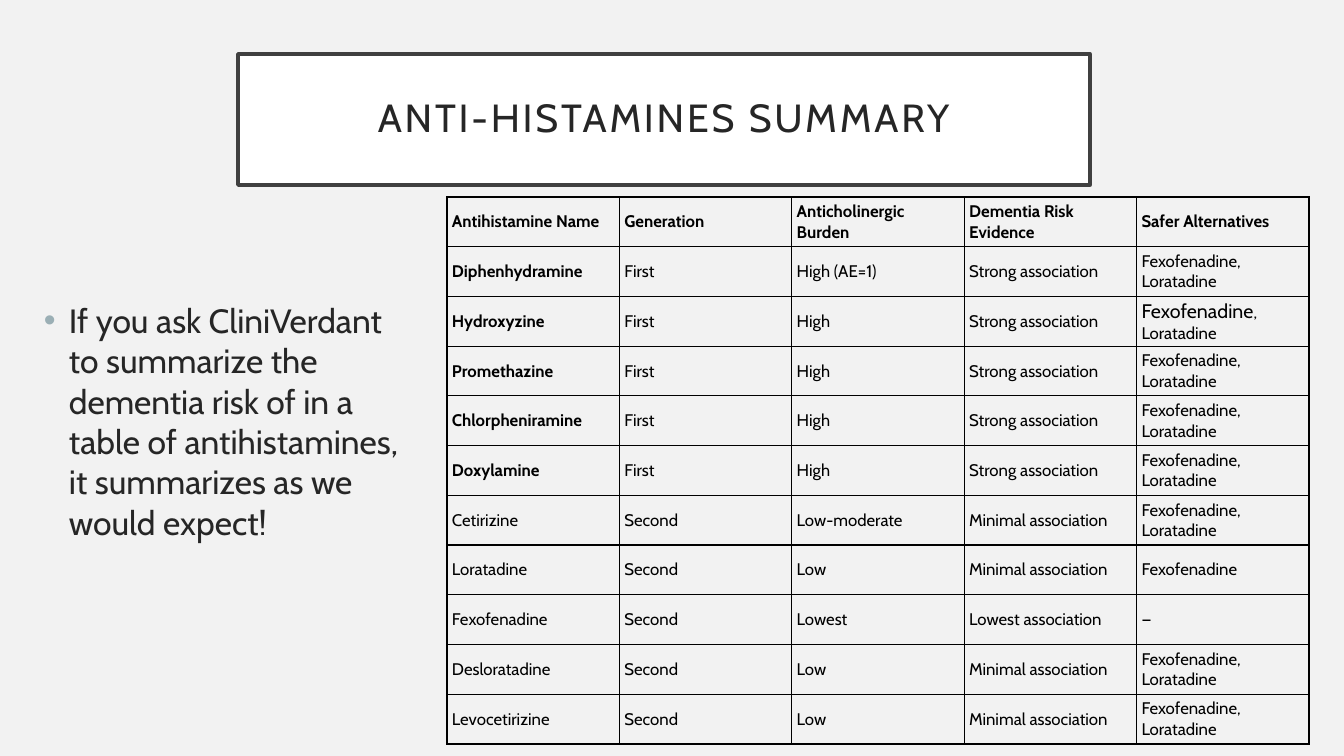
from lxml import etree
from pptx import Presentation
from pptx import util as u
from pptx.dml.color import RGBColor
from pptx.enum import shapes, text
from pptx.oxml.ns import qn

PX = 914400 / 100.8
FONT = "Cabin"
COLORS = {
    "background": "F2F2F2",
    "title_fill": "FFFFFF",
    "title_line": "404040",
    "text": "262626",
    "bullet": "9BAFB5",
    "table": "000000",
}
TITLE = "ANTI-HISTAMINES SUMMARY"
REMARK = ("If you ask CliniVerdant to summarize the dementia risk of in a "
          "table of antihistamines, it summarizes as we would expect!")
BOTH = "Fexofenadine, Loratadine"
HEADER = ("Antihistamine Name", "Generation", "Anticholinergic Burden",
          "Dementia Risk Evidence", "Safer Alternatives")
DRUGS = [
    ("Diphenhydramine", "First", "High (AE=1)", "Strong association", BOTH),
    ("Hydroxyzine", "First", "High", "Strong association", BOTH),
    ("Promethazine", "First", "High", "Strong association", BOTH),
    ("Chlorpheniramine", "First", "High", "Strong association", BOTH),
    ("Doxylamine", "First", "High", "Strong association", BOTH),
    ("Cetirizine", "Second", "Low-moderate", "Minimal association", BOTH),
    ("Loratadine", "Second", "Low", "Minimal association", "Fexofenadine"),
    ("Fexofenadine", "Second", "Lowest", "Lowest association", "—"),
    ("Desloratadine", "Second", "Low", "Minimal association", BOTH),
    ("Levocetirizine", "Second", "Low", "Minimal association", BOTH),
]


def px(length):
    return u.Emu(round(length * PX))


def color(name):
    return RGBColor.from_string(COLORS[name])


def style(font, size, color_name, bold=False):
    font.name = FONT
    font.size = u.Pt(size)
    font.bold = bold
    font.color.rgb = color(color_name)


def add_title(slide, box):
    shape = slide.shapes.add_shape(shapes.MSO_SHAPE.RECTANGLE, *map(px, box))
    shape.shadow.inherit = False
    shape.fill.solid()
    shape.fill.fore_color.rgb = color("title_fill")
    shape.line.color.rgb = color("title_line")
    shape.line.width = u.Pt(2.5)
    frame = shape.text_frame
    frame.vertical_anchor = text.MSO_ANCHOR.MIDDLE
    paragraph = frame.paragraphs[0]
    paragraph.alignment = text.PP_ALIGN.CENTER
    paragraph.line_spacing = 0.9
    run = paragraph.add_run()
    run.text = TITLE
    style(paragraph.font, 28, "text")
    style(run.font, 28, "text")
    # Letter spacing, in hundredths of a point
    run._r.get_or_add_rPr().set("spc", "200")


def add_remark(slide, box):
    frame = slide.shapes.add_textbox(*map(px, box)).text_frame
    frame.word_wrap = True
    paragraph = frame.paragraphs[0]
    paragraph.text = REMARK
    style(paragraph.font, 24, "text")
    # Coloured bullet with a hanging indent, ahead of the font defaults
    properties = paragraph._p.get_or_add_pPr()
    properties.set("marL", str(px(25)))
    properties.set("indent", str(-px(25)))
    bullet_color = etree.Element(qn("a:buClr"))
    etree.SubElement(bullet_color, qn("a:srgbClr"), val=COLORS["bullet"])
    properties.insert(0, bullet_color)
    properties.insert(1, etree.Element(qn("a:buFont"), typeface="Arial"))
    properties.insert(2, etree.Element(qn("a:buChar"), char="•"))


def add_borders(cell):
    properties = cell._tc.get_or_add_tcPr()
    for index, side in enumerate(("lnL", "lnR", "lnT", "lnB")):
        line = etree.Element(qn(f"a:{side}"), w=str(u.Pt(1)))
        fill = etree.SubElement(line, qn("a:solidFill"))
        etree.SubElement(fill, qn("a:srgbClr"), val=COLORS["table"])
        properties.insert(index, line)


def fill_cell(cell, words, bold, large=""):
    cell.fill.background()
    cell.vertical_anchor = text.MSO_ANCHOR.MIDDLE
    cell.margin_left = cell.margin_right = px(5)
    cell.margin_top = cell.margin_bottom = px(2)
    paragraph = cell.text_frame.paragraphs[0]
    style(paragraph.font, 12, "table", bold)
    if large:
        run = paragraph.add_run()
        run.text = large
        style(run.font, 14, "table", bold)
    run = paragraph.add_run()
    run.text = words.removeprefix(large)
    style(run.font, 12, "table", bold)
    add_borders(cell)


def add_drug_table(slide, box):
    rows = [HEADER, *DRUGS]
    table = slide.shapes.add_table(len(rows), len(HEADER), *map(px, box)).table
    table.first_row = table.horz_banding = False
    for column in table.columns:
        column.width = px(box[2] / len(HEADER))
    for row_index, row in enumerate(rows):
        table.rows[row_index].height = px(box[3] / len(rows))
        for column_index, words in enumerate(row):
            # Header and first-generation names are bold
            bold = row is HEADER or (column_index == 0 and row[1] == "First")
            enlarged = row[0] == "Hydroxyzine" and column_index == 4
            fill_cell(table.cell(row_index, column_index), words, bold,
                      "Fexofenadine" if enlarged else "")


def add_summary_slide(presentation):
    slide = presentation.slides.add_slide(presentation.slide_layouts[6])
    slide.background.fill.solid()
    slide.background.fill.fore_color.rgb = color("background")
    add_title(slide, (238, 54, 852, 131))
    add_drug_table(slide, (447, 197, 862, 547))
    add_remark(slide, (34, 295, 381, 407))


def main():
    presentation = Presentation()
    presentation.slide_width = px(1344)
    presentation.slide_height = px(756)
    add_summary_slide(presentation)
    presentation.save("out.pptx")


if __name__ == "__main__":
    main()
